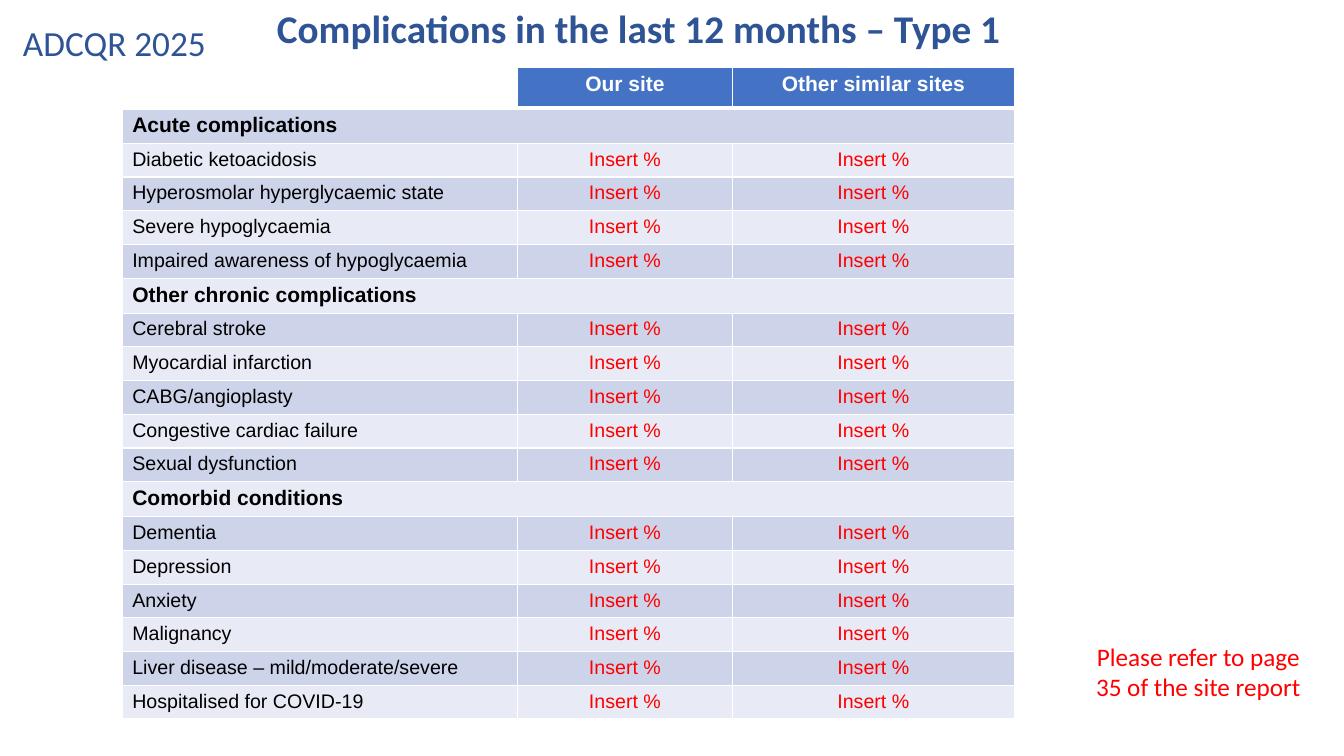
from dataclasses import dataclass
from typing import Any

from pptx import Presentation
from pptx import util as u
from pptx.dml.color import RGBColor
from pptx.enum import text
from pptx.oxml import parse_xml
from pptx.oxml.ns import nsdecls


@dataclass(frozen=True)
class Theme:
    navy: str = "2F5496"
    header: str = "4472C4"
    bands: tuple[str, str] = ("E8EBF5", "CDD4EA")
    white: str = "FFFFFF"
    black: str = "000000"
    red: str = "FF0000"
    heading_font: str = "Calibri"
    table_font: str = "Arial"
    title_pt: float = 28
    registry_pt: float = 25.2
    note_pt: float = 18
    section_pt: float = 15
    row_pt: float = 14


@dataclass(frozen=True)
class Label:
    """A text box; box is left, top, width, height in centimetres."""
    words: str
    box: tuple[float, float, float, float]
    font: dict[str, Any]
    color: str
    align: text.PP_ALIGN = text.PP_ALIGN.LEFT
    anchor: text.MSO_ANCHOR = text.MSO_ANCHOR.TOP
    inset: float = 0.13


@dataclass(frozen=True)
class Section:
    name: str
    conditions: tuple[str, ...]


T = Theme()
CENTER = text.PP_ALIGN.CENTER

LABELS = (
    Label("ADCQR 2025", (0.33, 0.48, 5.46, 1.19),
          {"name": T.heading_font, "size": u.Pt(T.registry_pt)}, T.navy,
          anchor=text.MSO_ANCHOR.MIDDLE),
    Label("Complications in the last 12 months – Type 1", (6.73, -0.03, 26.5, 1.45),
          {"name": T.heading_font, "size": u.Pt(T.title_pt), "bold": True}, T.navy),
    Label("Please refer to page 35 of the site report", (27.15, 15.9, 6.1, 2.06),
          {"name": T.heading_font, "size": u.Pt(T.note_pt)}, T.red,
          align=CENTER, inset=0.25),
)

HEADINGS = ("", "Our site", "Other similar sites")
PLACEHOLDER = "Insert %"
SECTIONS = (
    Section("Acute complications", (
        "Diabetic ketoacidosis", "Hyperosmolar hyperglycaemic state",
        "Severe hypoglycaemia", "Impaired awareness of hypoglycaemia")),
    Section("Other chronic complications", (
        "Cerebral stroke", "Myocardial infarction", "CABG/angioplasty",
        "Congestive cardiac failure", "Sexual dysfunction")),
    Section("Comorbid conditions", (
        "Dementia", "Depression", "Anxiety", "Malignancy",
        "Liver disease – mild/moderate/severe", "Hospitalised for COVID-19")),
)

TABLE_LEFT, TABLE_TOP = 3.08, 1.7
COLUMN_WIDTHS = (9.96, 5.42, 7.1)
HEADER_HEIGHT, SECTION_HEIGHT, ROW_HEIGHT = 1.03, 0.88, 0.85

HEADER_FONT = {"name": T.table_font, "size": u.Pt(T.section_pt), "bold": True}
ROW_FONT = {"name": T.table_font, "size": u.Pt(T.row_pt), "bold": False}


def write(tf: Any, words: str, font: dict[str, Any], color: str,
          align: text.PP_ALIGN) -> None:
    p = tf.paragraphs[0]
    p.alignment = align
    r = p.add_run()
    r.text = words
    for name, value in font.items():
        setattr(r.font, name, value)
    r.font.color.rgb = RGBColor.from_string(color)


def add_label(s: Any, label: Label) -> None:
    tf = s.shapes.add_textbox(*map(u.Cm, label.box)).text_frame
    layout = {
        "word_wrap": True, "vertical_anchor": label.anchor,
        "margin_left": u.Cm(0.25), "margin_right": u.Cm(0.25),
        "margin_top": u.Cm(label.inset), "margin_bottom": u.Cm(label.inset),
    }
    for name, value in layout.items():
        setattr(tf, name, value)
    write(tf, label.words, label.font, label.color, label.align)


def paint_cell(cell: Any, fill: str, top_pt: int = 1, bottom_pt: int = 1) -> None:
    """Give the cell white borders and a solid fill."""
    tc_pr = cell._tc.get_or_add_tcPr()
    for side, width in (("L", 1), ("R", 1), ("T", top_pt), ("B", bottom_pt)):
        tc_pr.append(parse_xml(
            f'<a:ln{side} {nsdecls("a")} w="{u.Pt(width)}"><a:solidFill>'
            f'<a:srgbClr val="{T.white}"/></a:solidFill></a:ln{side}>'))
    cell.fill.solid()
    cell.fill.fore_color.rgb = RGBColor.from_string(fill)


def fill_header(tb: Any) -> None:
    tb.rows[0].height = u.Cm(HEADER_HEIGHT)
    for cell, heading in zip(tb.rows[0].cells, HEADINGS):
        paint_cell(cell, T.header if heading else T.white, bottom_pt=3)
        if heading:
            write(cell.text_frame, heading, HEADER_FONT, T.white, CENTER)


def fill_row(tb: Any, index: int, name: str, is_section: bool) -> None:
    row = tb.rows[index]
    row.height = u.Cm(SECTION_HEIGHT if is_section else ROW_HEIGHT)
    first, *values = row.cells
    for cell in row.cells:
        paint_cell(cell, T.bands[index % 2], top_pt=3 if index == 1 else 1)
    write(first.text_frame, name, HEADER_FONT if is_section else ROW_FONT,
          T.black, text.PP_ALIGN.LEFT)
    if is_section:
        first.merge(values[-1])
        return
    for cell in values:
        write(cell.text_frame, PLACEHOLDER, ROW_FONT, T.red, CENTER)


def add_complications_table(s: Any) -> None:
    rows = [(name, name == section.name) for section in SECTIONS
            for name in (section.name, *section.conditions)]
    height = HEADER_HEIGHT + sum(
        SECTION_HEIGHT if is_section else ROW_HEIGHT for _, is_section in rows)
    tb = s.shapes.add_table(
        len(rows) + 1, len(HEADINGS), u.Cm(TABLE_LEFT), u.Cm(TABLE_TOP),
        u.Cm(sum(COLUMN_WIDTHS)), u.Cm(height)).table
    for column, width in zip(tb.columns, COLUMN_WIDTHS):
        column.width = u.Cm(width)
    fill_header(tb)
    for index, (name, is_section) in enumerate(rows, start=1):
        fill_row(tb, index, name, is_section)


def main() -> None:
    prs = Presentation()
    prs.slide_width, prs.slide_height = u.Cm(33.87), u.Cm(19.05)
    s = prs.slides.add_slide(prs.slide_layouts[6])
    add_complications_table(s)
    for label in LABELS:
        add_label(s, label)
    prs.save("out.pptx")


if __name__ == "__main__":
    main()
